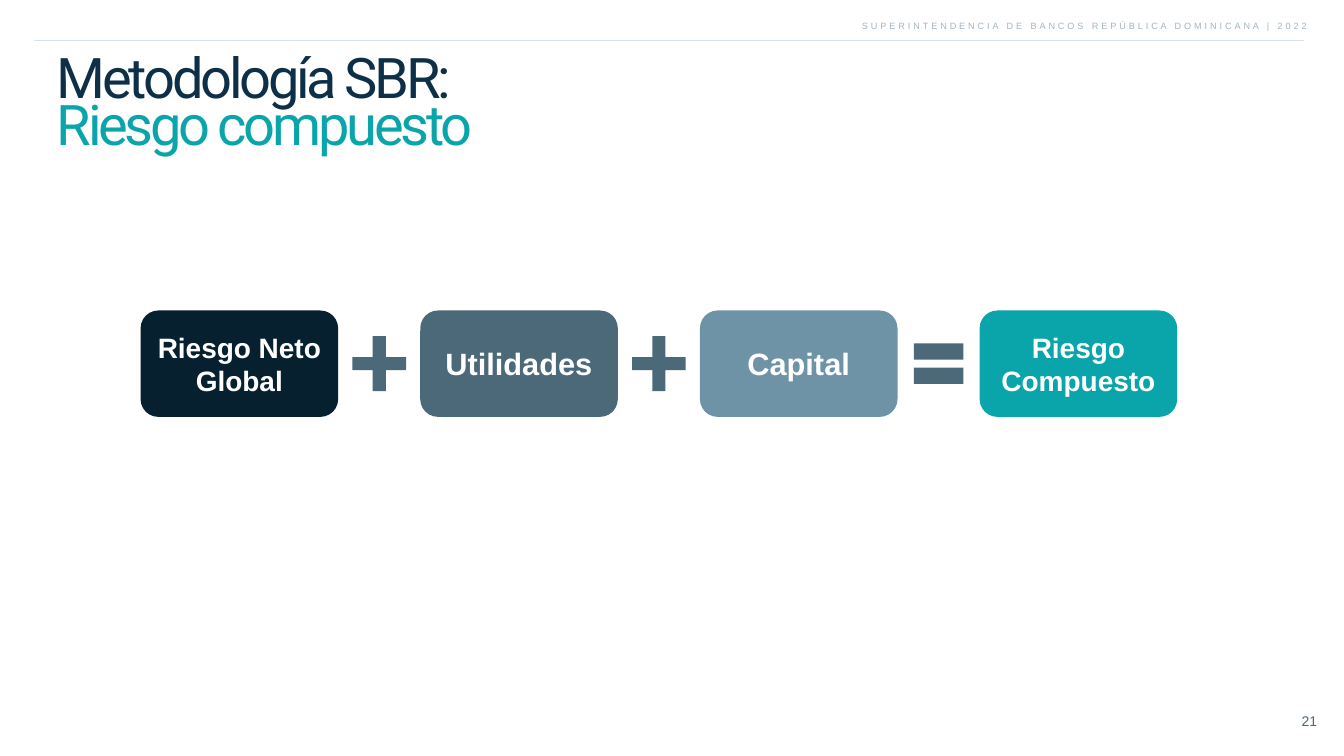
from pptx import Presentation
from pptx.dml.color import RGBColor
from pptx.enum.shapes import MSO_CONNECTOR, MSO_SHAPE
from pptx.enum.text import MSO_ANCHOR, MSO_AUTO_SIZE, PP_ALIGN
from pptx.oxml.ns import qn
from pptx.util import Inches, Pt
from lxml.etree import SubElement

HEADER = "SUPERINTENDENCIA DE BANCOS REPÚBLICA DOMINICANA | 2022"
PAGE_NUMBER = "21"
TITLE = [("Metodología SBR:", "navy"), ("Riesgo compuesto", "teal")]
TERMS = [
    ("Riesgo Neto Global", "midnight", "long_term"),
    ("Utilidades", "slate", "term"),
    ("Capital", "steel", "term"),
    ("Riesgo Compuesto", "teal", "long_term"),
]
OPERATORS = ["plus", "plus", "equal"]

THEME = {
    "colors": {
        "navy": "0D3048", "teal": "0AA5AB", "midnight": "072030", "slate": "4B6978",
        "steel": "6F93A6", "mist": "A1B6C1", "rule": "D8E2E8", "number": "4C6978",
        "white": "FFFFFF",
    },
    "sizes": {"header": 13, "number": 20, "long_term": 40, "term": 44, "title": 80},
    "fonts": {"body": "Arial", "title": "Roboto"},
}

# Shares of the slide, in percent: left, top, width, height.
HEADER_AREA = (63.14, 2, 34.46, 4.27)
NUMBER_AREA = (95.61, 93.53, 2.77, 3.47)
TITLE_AREA = (3.86, 7.33, 48.07, 14.07)
RULE_LEFT, RULE_RIGHT, RULE_TOP = 2.55, 97.04, 5.33
FIRST_TERM, TERM_TOP, TERM_WIDTH, TERM_HEIGHT = 10.46, 41.07, 14.7, 14.07
TERM_PITCH = 20.81
SIGNS = {
    "plus": (MSO_SHAPE.MATH_PLUS, 5.44, 9.87, 0.18),
    "equal": (MSO_SHAPE.MATH_EQUAL, 5.02, 9.07, None),
}

deck = Presentation()
deck.slide_width, deck.slide_height = Inches(26.67), Inches(15)
slide = deck.slides.add_slide(deck.slide_layouts[5])


def color(name):
    return RGBColor.from_string(THEME["colors"][name])


def across(share):
    return round(deck.slide_width * share / 100)


def down(share):
    return round(deck.slide_height * share / 100)


def place(left, top, width, height):
    return across(left), down(top), across(width), down(height)


def apply(target, formats):
    for attribute, value in formats.items():
        setattr(target, attribute, value)


def write(holder, lines, size, align, anchor=MSO_ANCHOR.TOP, wrap=True,
          font="body", bold=False, tracking=0, leading=1.0):
    frame = holder.text_frame
    apply(frame, {
        "auto_size": MSO_AUTO_SIZE.NONE, "word_wrap": wrap, "vertical_anchor": anchor,
        **{f"margin_{side}": Inches(0.1) for side in ("left", "right", "top", "bottom")},
    })
    for index, (words, tint) in enumerate(lines):
        paragraph = frame.add_paragraph() if index else frame.paragraphs[0]
        apply(paragraph, {"alignment": align, "line_spacing": leading, "space_before": Pt(0)})
        run = paragraph.add_run()
        run.text = words
        apply(run.font, {"name": THEME["fonts"][font], "size": Pt(THEME["sizes"][size]),
                         "bold": bold})
        run.font.color.rgb = color(tint)
        if tracking:
            run._r.get_or_add_rPr().set("spc", str(round(tracking * 100)))


def add_block(kind, area, tint):
    block = slide.shapes.add_shape(kind, *place(*area))
    block.shadow.inherit = False
    block.fill.solid()
    block.fill.fore_color.rgb = color(tint)
    block.line.fill.background()
    return block


header = slide.shapes.add_textbox(*place(*HEADER_AREA))
write(header, [(HEADER, "mist")], "header", PP_ALIGN.RIGHT, wrap=False, tracking=4.2)

rule = slide.shapes.add_connector(MSO_CONNECTOR.STRAIGHT, across(RULE_LEFT), down(RULE_TOP),
                                  across(RULE_RIGHT), down(RULE_TOP))
rule.line.color.rgb = color("rule")
rule.line.width = Pt(0.75)
SubElement(rule._element.spPr, qn("a:effectLst"))

number = slide.shapes.add_textbox(*place(*NUMBER_AREA))
write(number, [(PAGE_NUMBER, "number")], "number", PP_ALIGN.RIGHT)

title = slide.shapes.title
apply(title, dict(zip(("left", "top", "width", "height"), place(*TITLE_AREA))))
write(title, TITLE, "title", PP_ALIGN.LEFT, font="title", tracking=-4.7, leading=0.7)

for column, (term, tint, size) in enumerate(TERMS):
    left = FIRST_TERM + column * TERM_PITCH
    box = add_block(MSO_SHAPE.ROUNDED_RECTANGLE, (left, TERM_TOP, TERM_WIDTH, TERM_HEIGHT), tint)
    write(box, [(term, "white")], size, PP_ALIGN.CENTER, MSO_ANCHOR.MIDDLE, bold=True)

middle = TERM_TOP + TERM_HEIGHT / 2
for column, operator in enumerate(OPERATORS):
    kind, width, height, thickness = SIGNS[operator]
    center = FIRST_TERM + column * TERM_PITCH + (TERM_WIDTH + TERM_PITCH) / 2
    sign = add_block(kind, (center - width / 2, middle - height / 2, width, height), "slate")
    if thickness:
        sign.adjustments[0] = thickness

deck.save("out.pptx")
